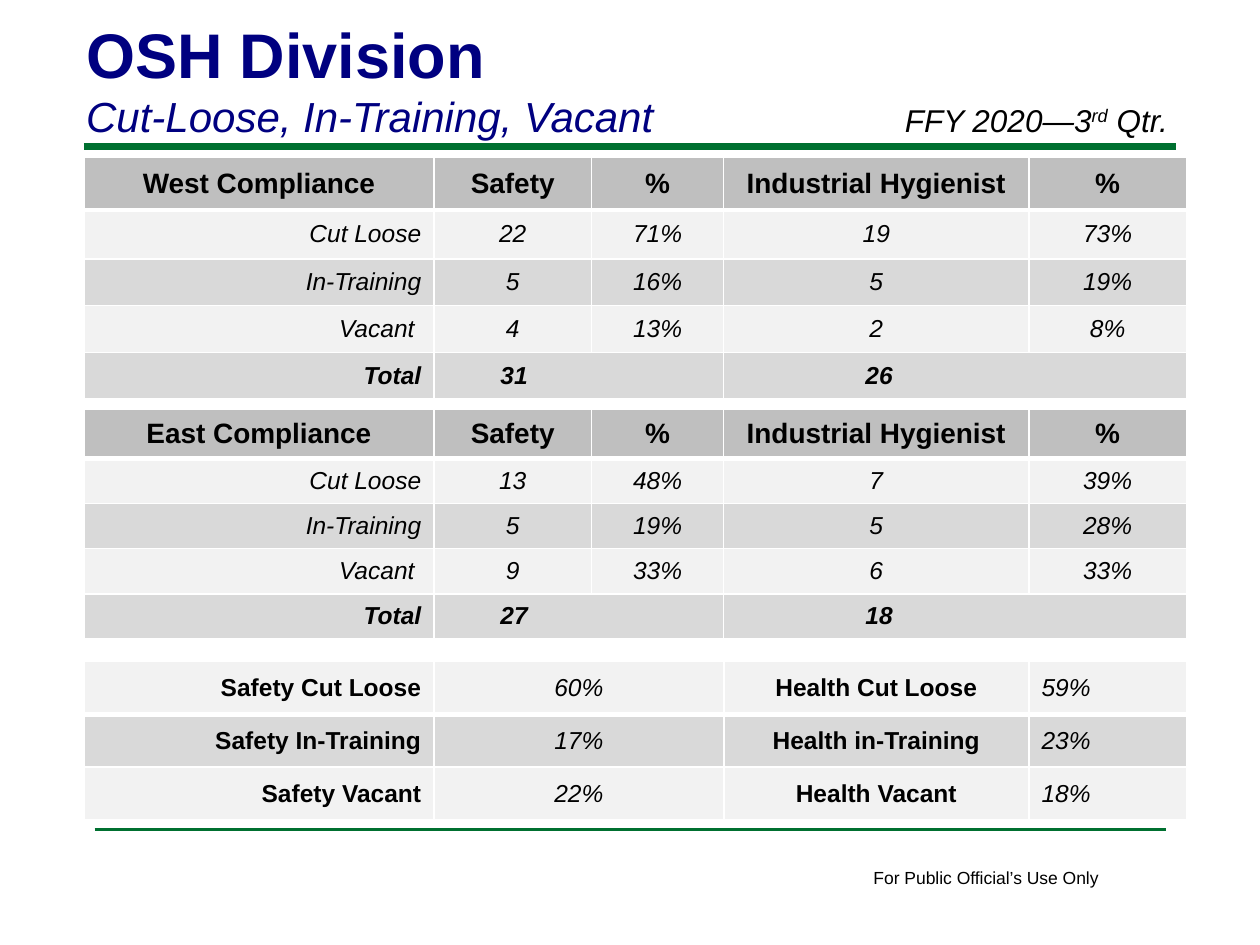
from lxml.etree import SubElement
from pptx import Presentation
from pptx.dml.color import RGBColor
from pptx.enum.shapes import MSO_CONNECTOR
from pptx.enum.text import MSO_ANCHOR, MSO_AUTO_SIZE, PP_ALIGN
from pptx.oxml.ns import qn
from pptx.util import Pt

COLORS = {
    "green": "007030", "navy": "000080", "black": "000000", "white": "FFFFFF",
    "header": "BFBFBF", "light": "F2F2F2", "dark": "D9D9D9",
}
FONT = "Arial"
LEFT, CENTER, RIGHT = PP_ALIGN.LEFT, PP_ALIGN.CENTER, PP_ALIGN.RIGHT
COMPLIANCE_COLS = [200, 90, 75.6, 174.4, 90]
SUMMARY_COLS = [200, 165.6, 174.4, 90]
STATUSES = ["Cut Loose", "In-Training", "Vacant "]


def add_run(p, text, size, color="black", bold=False, italic=False):
    r = p.add_run()
    r.text = text
    font = r.font
    font.name, font.size, font.bold, font.italic = FONT, Pt(size), bold, italic
    font.color.rgb = RGBColor.from_string(COLORS[color])
    return r


def add_rule(slide, left, top, width, weight):
    line = slide.shapes.add_connector(
        MSO_CONNECTOR.STRAIGHT, Pt(left), Pt(top), Pt(left + width), Pt(top))
    line.line.color.rgb = RGBColor.from_string(COLORS["green"])
    line.line.width = Pt(weight)
    SubElement(line._element.spPr, qn("a:effectLst"))


def add_text_box(slide, left, top, width, height, wrap):
    sp = slide.shapes.add_textbox(Pt(left), Pt(top), Pt(width), Pt(height))
    sp.text_frame.word_wrap = wrap
    return sp.text_frame.paragraphs[0]


def add_heading(slide, left, top, width, height):
    sp = slide.shapes.title
    sp.left, sp.top, sp.width, sp.height = map(Pt, (left, top, width, height))
    tf = sp.text_frame
    tf.auto_size = MSO_AUTO_SIZE.NONE
    tf.word_wrap = True
    tf.vertical_anchor = MSO_ANCHOR.BOTTOM
    add_run(tf.paragraphs[0], "OSH Division", 36, "navy", bold=True)
    add_run(tf.add_paragraph(), "Cut-Loose, In-Training, Vacant", 24, "navy", italic=True)
    for p in tf.paragraphs:
        p.alignment = LEFT
        p.space_before = Pt(0)


def add_period(slide, left, top, width, height):
    p = add_text_box(slide, left, top, width, height, True)
    add_run(p, "FFY 2020—3", 18, italic=True)
    ordinal = add_run(p, "rd", 18, italic=True)
    ordinal._r.get_or_add_rPr().set("baseline", "30000")
    add_run(p, " Qtr.", 18, italic=True)


def add_footer(slide, left, top, width, height):
    p = add_text_box(slide, left, top, width, height, False)
    add_run(p, "For Public Official’s Use Only", 10)


def set_borders(cell, top, bottom):
    tcPr = cell._tc.get_or_add_tcPr()
    for side, weight in (("L", 1), ("R", 1), ("T", top), ("B", bottom)):
        ln = SubElement(tcPr, qn(f"a:ln{side}"), w=str(Pt(weight)))
        fill = SubElement(ln, qn("a:solidFill"))
        SubElement(fill, qn("a:srgbClr"), val=COLORS["white"])


def add_grid(slide, left, top, cols, heights, fills):
    frame = slide.shapes.add_table(
        len(heights), len(cols), Pt(left), Pt(top), Pt(sum(cols)), Pt(sum(heights)))
    table = frame.table
    table.first_row = table.horz_banding = False
    for column, width in zip(table.columns, cols):
        column.width = Pt(width)
    for i, (row, height) in enumerate(zip(table.rows, heights)):
        row.height = Pt(height)
        for cell in row.cells:
            set_borders(cell, 3 if i == 1 else 1, 3 if i == 0 else 1)
            cell.fill.solid()
            cell.fill.fore_color.rgb = RGBColor.from_string(COLORS[fills[i]])
            cell.vertical_anchor = MSO_ANCHOR.MIDDLE
    return table


def write_cell(cell, text, align, size=14, bold=False, italic=False):
    p = cell.text_frame.paragraphs[0]
    p.alignment = align
    add_run(p, text, size, bold=bold, italic=italic)


def add_compliance(slide, left, top, heights, region, rows, totals):
    fills = ["header", "light", "dark", "light", "dark"]
    table = add_grid(slide, left, top, COMPLIANCE_COLS, heights, fills)
    headers = [f"{region} Compliance", "Safety", "%", "Industrial Hygienist", "%"]
    for c, text in enumerate(headers):
        write_cell(table.cell(0, c), text, CENTER, 16, bold=True)
    for r, (status, values) in enumerate(zip(STATUSES, rows), 1):
        write_cell(table.cell(r, 0), status, RIGHT, italic=True)
        for c, text in enumerate(values, 1):
            write_cell(table.cell(r, c), text, CENTER, italic=True)
    write_cell(table.cell(4, 0), "Total", RIGHT, bold=True, italic=True)
    for c, text, indent in zip((1, 3), totals, (38, 81)):
        cell = table.cell(4, c)
        cell.merge(table.cell(4, c + 1))
        cell.margin_left = Pt(indent)
        write_cell(cell, text, LEFT, bold=True, italic=True)


def add_summary(slide, left, top, heights, rows):
    table = add_grid(slide, left, top, SUMMARY_COLS, heights, ["light", "dark", "light"])
    for r, values in enumerate(rows):
        for c, (text, align) in enumerate(zip(values, (RIGHT, CENTER, CENTER, LEFT))):
            is_label = c % 2 == 0
            write_cell(table.cell(r, c), text, align, bold=is_label, italic=not is_label)


def main():
    prs = Presentation()
    prs.slide_width, prs.slide_height = Pt(720), Pt(540)
    slide = prs.slides.add_slide(prs.slide_layouts[5])
    add_rule(slide, 48, 84, 624, 4)
    add_rule(slide, 54, 474, 612, 2)
    add_footer(slide, 492, 492, 144.7, 19.4)
    add_heading(slide, 42, 4.5, 594, 79.9)
    add_compliance(
        slide, 48, 234, [28] + [25.8] * 4, "East",
        [["13", "48%", "7", "39%"], ["5", "19%", "5", "28%"], ["9", "33%", "6", "33%"]],
        ["27", "18"])
    add_compliance(
        slide, 48, 90, [30, 28] + [26.7] * 3, "West",
        [["22", "71%", "19", "73%"], ["5", "16%", "5", "19%"], ["4", "13%", "2", "8%"]],
        ["31", "26"])
    add_summary(slide, 48, 378, [30.2] * 3, [
        ["Safety Cut Loose", "60%", "Health Cut Loose", "59%"],
        ["Safety In-Training", "17%", "Health in-Training", "23%"],
        ["Safety Vacant", "22%", "Health Vacant", "18%"],
    ])
    add_period(slide, 510, 54, 180, 29)
    prs.save("out.pptx")


if __name__ == "__main__":
    main()
